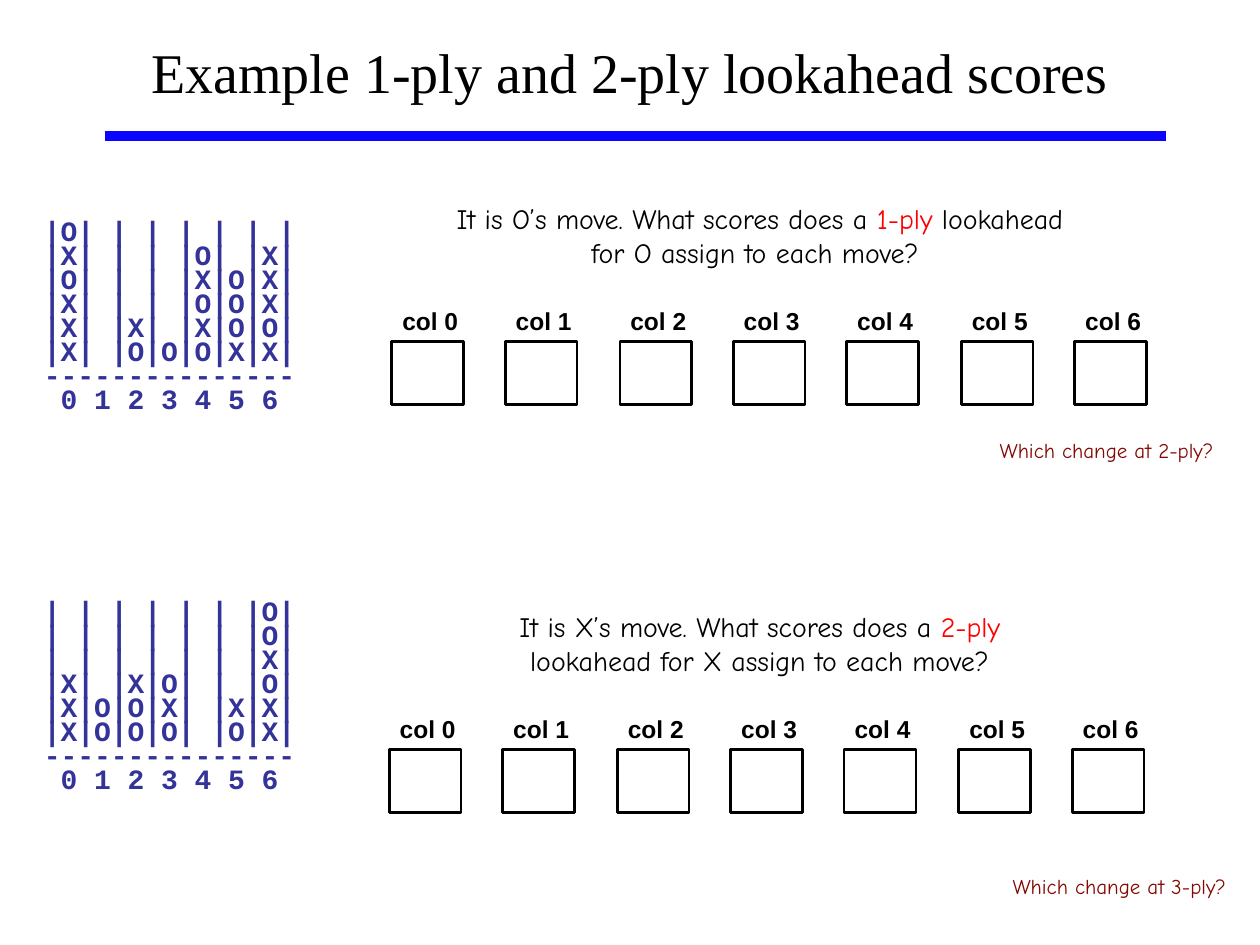
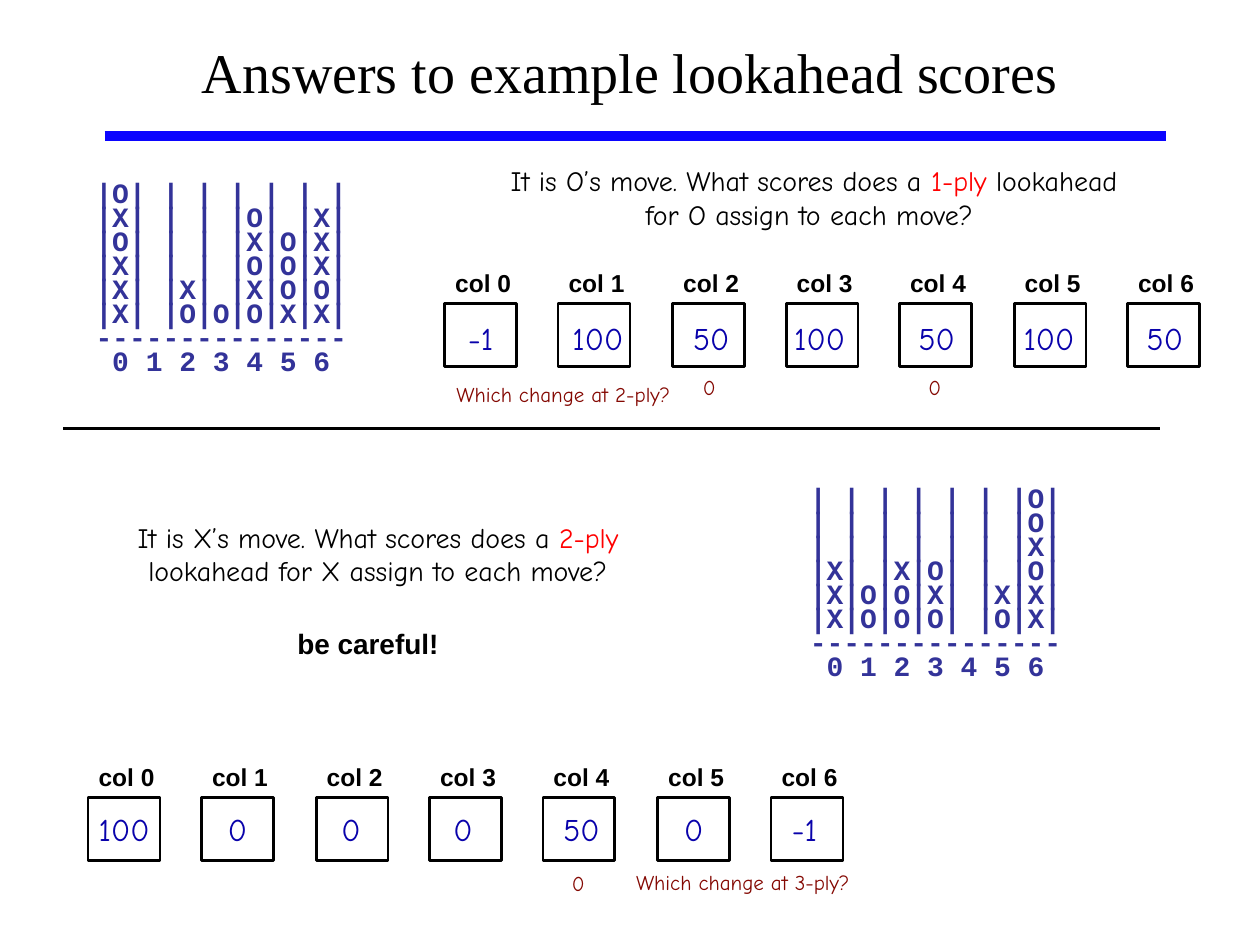
from lxml import etree
from pptx import Presentation, util as u
from pptx.dml.color import RGBColor
from pptx.enum import shapes, text
from pptx.oxml.ns import qn

PX = 9144  # EMU per px, 100 px to the inch
BLACK, RED, BLUE = "000000", "FF0000", "0B04FF"

FORMATS = {
    "title": {"name": "Times New Roman", "size": 32, "color": BLACK},
    "board": {"name": "Courier New", "size": 16, "color": "333399", "bold": True},
    "question": {"name": "Comic Neue", "size": 16, "color": BLACK},
    "label": {"name": "Arial", "size": 14, "color": BLACK, "bold": True},
    "warning": {"name": "Arial", "size": 16, "color": BLACK, "bold": True},
    "score": {"name": "Comic Neue", "size": 18, "color": "0902AB"},
    "note": {"name": "Comic Neue", "size": 12, "color": "840802"},
}
LEFT, CENTER, RIGHT = text.PP_ALIGN.LEFT, text.PP_ALIGN.CENTER, text.PP_ALIGN.RIGHT

# Boards and questions that both slides show
BOARD_FOOT = ["-" * 15, " 0 1 2 3 4 5 6"]
O_BOARD = ["|O| | | | | | |", "|X| | | |O| |X|", "|O| | | |X|O|X|",
           "|X| | | |O|O|X|", "|X| |X| |X|O|O|", "|X| |O|O|O|X|X|"]
X_BOARD = ["| | | | | | |O|", "| | | | | | |O|", "| | | | | | |X|",
           "|X| |X|O| | |O|", "|X|O|O|X| |X|X|", "|X|O|O|O| |O|X|"]
O_QUESTION = ["It is O’s move. What scores does a ", "1-ply",
              " lookahead for O assign to each move? "]
X_QUESTION = ["It is X’s move. What scores does a ", "2-ply",
              " lookahead for X assign to each move?"]
TWO_PLY, THREE_PLY = "Which change at 2-ply?", "Which change at 3-ply?"


def rgb(value):
    return RGBColor.from_string(value)


class Deck:
    def __init__(self):
        self.prs = Presentation()
        self.prs.slide_width, self.prs.slide_height = 1000 * PX, 750 * PX
        self.s = None

    def slide(self, title):
        self.s = self.prs.slides.add_slide(self.prs.slide_layouts[6])
        self.text(100, 25, 800, 63, [[title]], "title")
        self.rule(83, 108, 925, BLUE, 6)

    def text(self, x, y, w, h, paragraphs, style, align=CENTER, spacing=None):
        """Each paragraph is a list of runs; every second run is red."""
        sp = self.s.shapes.add_textbox(x * PX, y * PX, w * PX, h * PX)
        tf = sp.text_frame
        tf.word_wrap = True
        tf.auto_size = text.MSO_AUTO_SIZE.SHAPE_TO_FIT_TEXT
        for i, runs in enumerate(paragraphs):
            p = tf.add_paragraph() if i else tf.paragraphs[0]
            p.alignment, p.line_spacing = align, spacing
            self.space_before(p, 50)
            for j, words in enumerate(runs):
                r = p.add_run()
                r.text = words
                self.font(r.font, style, j % 2 == 1)

    def space_before(self, p, percent):
        p.space_before = u.Pt(0)
        before = p._p.pPr.find(qn("a:spcBef"))
        before.clear()
        etree.SubElement(before, qn("a:spcPct"), val=str(percent * 1000))

    def font(self, font, style, marked):
        for key, value in FORMATS[style].items():
            if key == "color":
                font.color.rgb = rgb(RED if marked else value)
            else:
                setattr(font, key, u.Pt(value) if key == "size" else value)

    def rule(self, x1, y, x2, color, width):
        line = self.s.shapes.add_connector(
            shapes.MSO_CONNECTOR.STRAIGHT, x1 * PX, y * PX, x2 * PX, y * PX)
        line.line.color.rgb, line.line.width = rgb(color), u.Pt(width)
        etree.SubElement(line._element.spPr, qn("a:effectLst"))

    def box(self, x, y, w, h):
        sp = self.s.shapes.add_shape(
            shapes.MSO_SHAPE.RECTANGLE, x * PX, y * PX, w * PX, h * PX)
        sp.shadow.inherit = False
        sp.fill.background()
        sp.line.color.rgb, sp.line.width = rgb(BLACK), u.Pt(1.5)

    def board(self, x, y, rows):
        self.text(x, y, 258, 168, [[row] for row in rows + BOARD_FOOT],
                  "board", LEFT, 0.3)

    def question(self, x, y, w, runs):
        self.text(x, y, w, 64, [runs], "question")

    def columns(self, x, y):
        for i in range(7):
            left = x + round(i * 90.3)
            self.text(left, y, 67, 33, [[f"col {i}"]], "label")
            self.box(left + 3, y + 33, 57, 50)

    def scores(self, y, cells):
        for score, x in cells:
            self.text(x, y, 65, 40, [[str(score)]], "score")

    def note(self, x, y, words, align=RIGHT):
        self.text(x, y, 284, 30, [[words]], "note", align)

    def change(self, x, y):
        self.text(x, y, 44, 30, [["0"]], "note")


def main():
    d = Deck()

    # Slide 1: the two exercises
    d.slide("Example 1-ply and 2-ply lookahead scores")
    d.board(25, 180, O_BOARD)
    d.question(349, 155, 508, O_QUESTION)
    d.columns(308, 238)
    d.note(689, 342, TWO_PLY)
    d.board(25, 482, X_BOARD)
    d.question(353, 479, 500, X_QUESTION)
    d.columns(306, 562)
    d.note(699, 688, THREE_PLY)

    # Slide 2, top half: answers for O
    d.slide("Answers to example lookahead scores")
    d.board(66, 150, O_BOARD)
    d.question(392, 125, 508, O_QUESTION)
    d.columns(350, 208)
    d.scores(248, [(-1, 349), (100, 442), (50, 532), (100, 618),
                   (50, 711), (100, 800), (50, 892)])
    d.note(258, 298, TWO_PLY)
    for x in (541, 720):
        d.change(x, 292)
    d.rule(50, 340, 921, BLACK, 1.5)

    # Slide 2, bottom half: answers for X
    d.board(633, 392, X_BOARD)
    d.question(50, 408, 500, X_QUESTION)
    d.text(192, 492, 200, 37, [["be careful!"]], "warning")
    d.columns(67, 600)
    d.scores(638, [(100, 66), (0, 156), (0, 246), (0, 335),
                   (50, 429), (0, 518), (-1, 606)])
    d.change(437, 686)
    d.note(495, 685, THREE_PLY, LEFT)

    d.prs.save("out.pptx")


if __name__ == "__main__":
    main()
